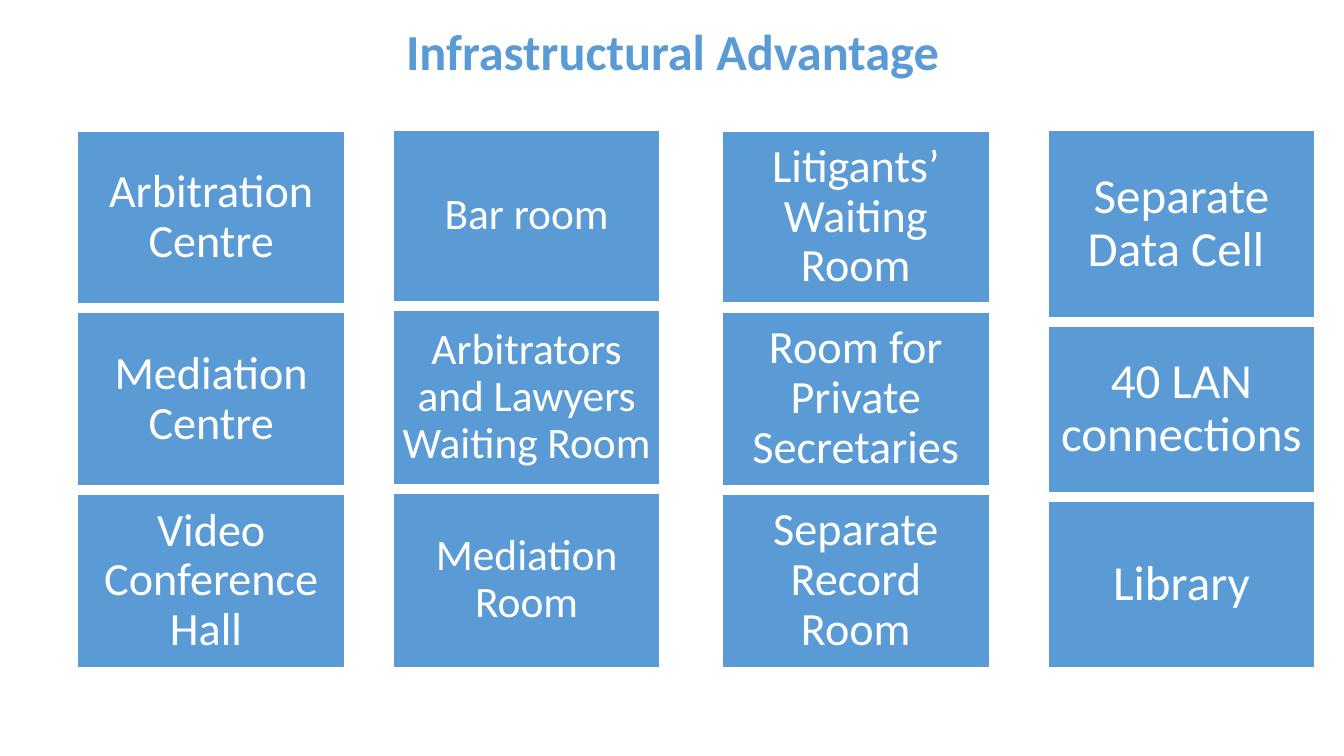
from dataclasses import dataclass

from pptx import Presentation
from pptx.dml.color import RGBColor
from pptx.enum.shapes import MSO_SHAPE
from pptx.enum.text import MSO_ANCHOR, PP_ALIGN
from pptx.slide import Slide
from pptx.text.text import TextFrame
from pptx.util import Cm, Pt

COLORS = {"blue": "5B9BD5", "white": "FFFFFF"}
FONT = "Calibri"
BOX_WIDTH = 6.73
BOX_GAP = 0.22


@dataclass
class Column:
    """A stack of facility boxes; lengths in cm, text size in points."""
    left: float
    top: float
    heights: tuple[float, ...]
    size: int
    inset: float
    facilities: tuple[str, ...]


COLUMNS = [
    Column(1.96, 3.3, (4.36, 4.36, 4.36), 33, 0.23,
           ("Arbitration Centre", "Mediation Centre", "Video Conference Hall ")),
    Column(9.91, 3.28, (4.32, 4.39, 4.39), 31, 0.23,
           ("Bar room", "Arbitrators and Lawyers Waiting Room", "Mediation Room")),
    Column(18.21, 3.3, (4.34, 4.37, 4.37), 33, 0.23,
           ("Litigants’ Waiting Room", "Room for Private Secretaries",
            "Separate Record Room")),
    Column(26.42, 3.28, (4.72, 4.19, 4.19), 35, 0.25,
           ("Separate Data Cell ", "40 LAN connections ", "Library")),
]


def rgb(name: str) -> RGBColor:
    return RGBColor.from_string(COLORS[name])


def set_text(tf: TextFrame, text: str, *, size: int, color: str, inset: float,
             bold: bool = False, anchor: MSO_ANCHOR = MSO_ANCHOR.MIDDLE) -> None:
    tf.word_wrap = True
    tf.vertical_anchor = anchor
    tf.margin_left = tf.margin_right = Cm(inset)
    tf.margin_top = tf.margin_bottom = Cm(min(inset, 0.25))
    p = tf.paragraphs[0]
    p.alignment = PP_ALIGN.CENTER
    p.line_spacing = 0.9
    r = p.add_run()
    r.text = text
    r.font.name = FONT
    r.font.size = Pt(size)
    r.font.bold = bold
    r.font.color.rgb = rgb(color)


def add_title(s: Slide, text: str) -> None:
    sp = s.shapes.title
    sp.left, sp.top, sp.width, sp.height = Cm(2.34), Cm(0.48), Cm(29.24), Cm(1.83)
    set_text(sp.text_frame, text, size=36, color="blue", inset=0.25,
             bold=True, anchor=MSO_ANCHOR.BOTTOM)


def add_column(s: Slide, column: Column) -> None:
    top = column.top
    for facility, height in zip(column.facilities, column.heights):
        sp = s.shapes.add_shape(MSO_SHAPE.RECTANGLE, Cm(column.left), Cm(top),
                                Cm(BOX_WIDTH), Cm(height))
        sp.shadow.inherit = False
        sp.fill.solid()
        sp.fill.fore_color.rgb = rgb("blue")
        sp.line.color.rgb = rgb("white")
        sp.line.width = Pt(1)
        set_text(sp.text_frame, facility, size=column.size, color="white",
                 inset=column.inset)
        top += height + BOX_GAP


def main() -> None:
    prs = Presentation()
    prs.slide_width, prs.slide_height = Cm(33.88), Cm(19.05)

    # Title-only slide
    s = prs.slides.add_slide(prs.slide_layouts[5])
    add_title(s, "Infrastructural Advantage")

    # Four stacks of facilities
    for column in COLUMNS:
        add_column(s, column)

    prs.save("out.pptx")


if __name__ == "__main__":
    main()
